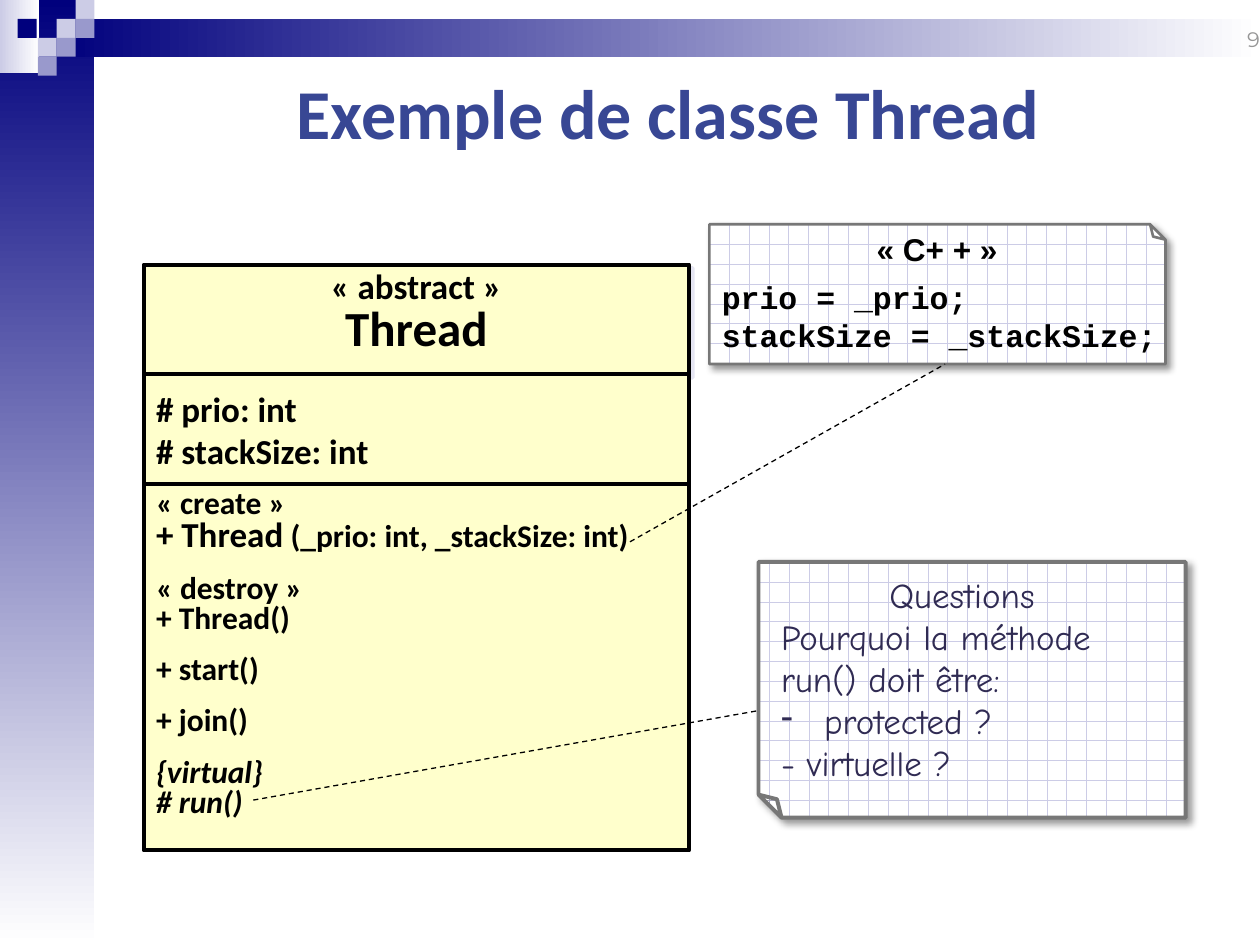
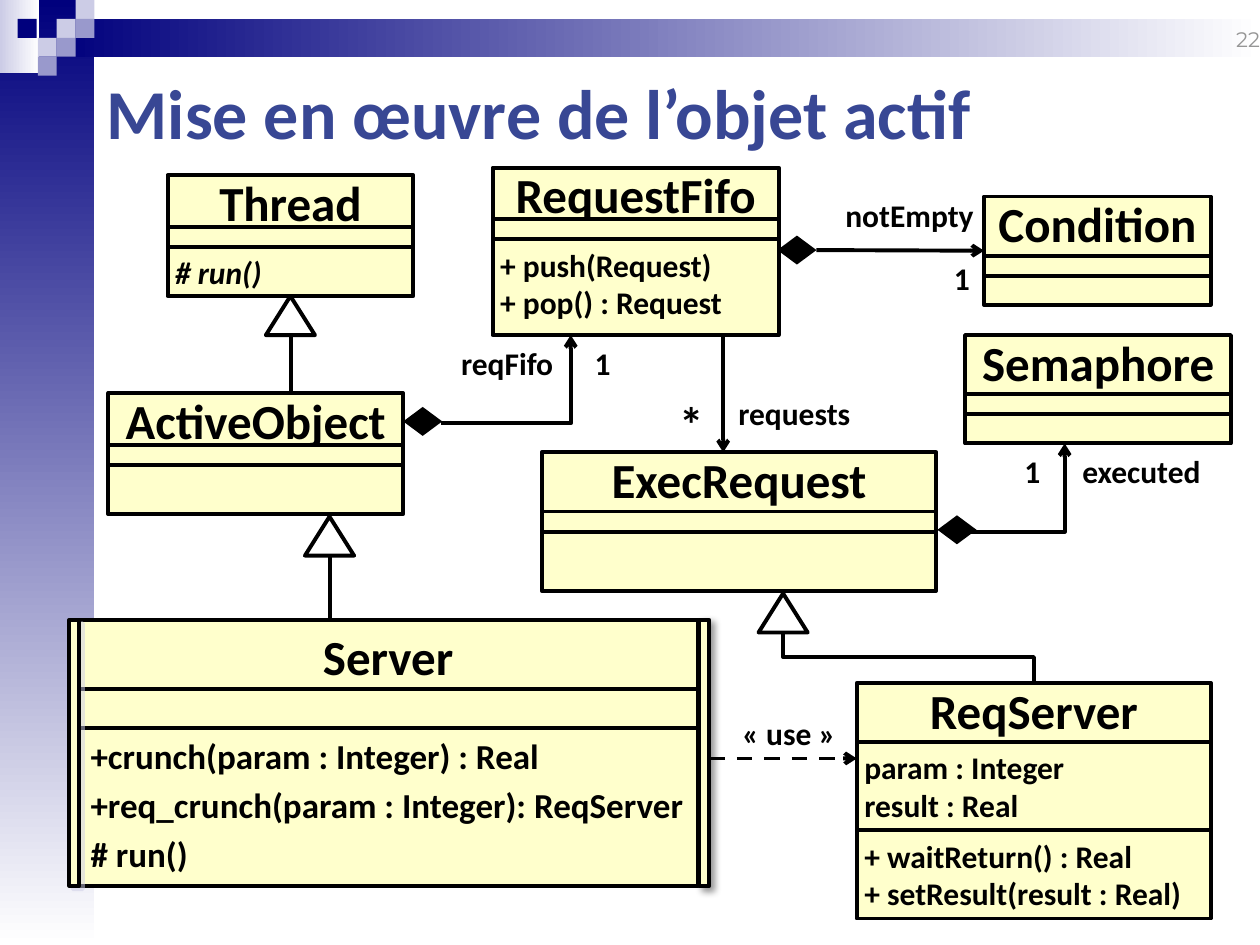
from lxml import etree
from pptx import Presentation
from pptx.dml.color import RGBColor
from pptx.enum.dml import MSO_LINE, MSO_PATTERN
from pptx.enum.shapes import MSO_CONNECTOR, MSO_SHAPE
from pptx.enum.text import MSO_ANCHOR, PP_ALIGN
from pptx.oxml.ns import qn
from pptx.util import Inches, Pt

RECT, NOTE = MSO_SHAPE.RECTANGLE, MSO_SHAPE.FOLDED_CORNER
GEM, TRI = MSO_SHAPE.DIAMOND, MSO_SHAPE.ISOSCELES_TRIANGLE
LINE, ELBOW = MSO_CONNECTOR.STRAIGHT, MSO_CONNECTOR.ELBOW
LEFT, MID, RIGHT = PP_ALIGN.LEFT, PP_ALIGN.CENTER, PP_ALIGN.RIGHT
TOP, HALF, LOW = MSO_ANCHOR.TOP, MSO_ANCHOR.MIDDLE, MSO_ANCHOR.BOTTOM
DASH, GRID = MSO_LINE.DASH, MSO_PATTERN.DOTTED_GRID

BLACK, WHITE = RGBColor(0, 0, 0), RGBColor(255, 255, 255)
NAVY, MAUVE = RGBColor(0, 0, 0x7D), RGBColor(0x99, 0x99, 0xCC)
PALE, CREAM = RGBColor(0xCC, 0xCC, 0xE6), RGBColor(0xFF, 0xFF, 0xCC)
BLUE, PLUM = RGBColor(0x38, 0x47, 0x94), RGBColor(0x30, 0x2B, 0x53)
GRAY, EDGE = RGBColor(0x96, 0x96, 0x96), RGBColor(0x77, 0x77, 0x77)
SANS, MONO, HAND = "Calibri", "Courier New", "Comic Neue"

SOFT = (BLACK, 40, 4, 3)
FLAT = (PALE, 50, 0, 2.8)
BARE = (0, 0, 0)
SLIM = (0.06, 0.05, 0.05)

STEP = 0.15
TILES = [(0.45, 1, PALE), (0.6, 0, PALE), (0.6, 1, MAUVE), (0.3, 2, PALE),
         (0.14, 1, NAVY), (0.45, 2, MAUVE), (0.3, 3, MAUVE)]

THREAD = {
    "at": (1.14, 2.1, 4.33), "rows": (0.87, 0.87, 2.91), "shade": FLAT,
    "name": [[("« abstract »", 20), ("\nThread", 28)]],
    "vars": ["# prio: int", "# stackSize: int"], "vars_style": {"size": 20},
    "ops": [[("« create »", 18), ("\n+ Thread", 20),
             (" (_prio: int, _stackSize: int)", 18)],
            "« destroy »\n+ Thread()", "+ start()", "+ join()",
            "{virtual}\n# run()"],
    "ops_style": {"lead": 0.8, "gap": 12, "slant": 4},
}
CODE = ["prio = _prio;", "stackSize = _stackSize;"]
ASK = ["Pourquoi la méthode run() doit être:", "protected ?", "- virtuelle ?"]
LINKS = [((5, 4.3), (7.5, 2.89)), ((2.01, 6.35), (6.02, 5.64))]

THIN = (0.41, 0.16, 0.39)
SMALL = (0.47, 0.16, 0.23)
TIGHT = {"pad": SLIM}
MODEL = [
    {"name": ["Server"], "at": (0.62, 4.92, 4.92), "rows": (0.55, 0.31, 1.25),
     "shade": FLAT, "lead": 1.0,
     "ops": ["+crunch(param : Integer) : Real",
             "+req_crunch(param : Integer): ReqServer", "# run()"],
     "ops_style": {"size": 20, "gap": 4}},
    {"name": ["ReqServer"], "at": (6.8, 5.42, 2.81), "rows": (0.47, 0.7, 0.7),
     "vars": ["param : Integer", "result : Real"], "vars_style": TIGHT,
     "ops": ["+ waitReturn() : Real", "+ setResult(result : Real)"],
     "ops_style": TIGHT},
    {"name": ["Thread"], "at": (1.33, 1.39, 1.95), "rows": THIN,
     "ops": ["# run()"], "ops_style": {"pad": SLIM, "slant": 0}},
    {"name": ["ActiveObject"], "at": (0.86, 3.12, 2.34), "rows": THIN},
    {"name": ["RequestFifo"], "at": (3.91, 1.33, 2.27),
     "rows": (0.41, 0.16, 0.76),
     "ops": ["+ push(Request)", "+ pop() : Request"], "ops_style": TIGHT},
    {"name": ["ExecRequest"], "at": (4.3, 3.59, 3.13),
     "rows": (0.47, 0.16, 0.47)},
    {"name": ["Condition"], "at": (7.81, 1.56, 1.8), "rows": SMALL},
    {"name": ["Semaphore"], "at": (7.66, 2.66, 2.11), "rows": SMALL},
]
BARS = [(5.55, SOFT), (0.55, FLAT)]
GEMS = [(3.2, 3.23), (7.44, 4.09), (6.17, 1.87)]
HEADS = [(2.42, 4.1), (2.11, 2.35), (6.02, 4.71)]
STEMS = [((2.31, 2.67), (2.31, 3.12)), ((2.62, 4.42), (2.62, 4.92))]
BENDS = [[(3.5, 3.36), (4.53, 3.36), (4.53, 2.66)],
         [(7.71, 4.22), (8.45, 4.22), (8.45, 3.52)]]
ROLES = [("« use »", 5.89, 5.67, 0.75, 18), ("*", 5.39, 3.12, 0.2, 28),
         ("requests", 5.86, 3.13, 0.89, 18), ("reqFifo", 3.66, 2.73, 0.74, 18),
         ("1", 4.72, 2.73, 0.13, 18), ("notEmpty", 6.71, 1.56, 1.03, 18),
         ("1", 7.57, 2.06, 0.13, 18), ("executed", 8.59, 3.59, 0.94, 18),
         ("1", 8.13, 3.59, 0.13, 18)]


def add(parent, tag, **attrs):
    node = etree.SubElement(parent, qn(tag))
    for key, val in attrs.items():
        node.set(key, str(val))
    return node


def cast(shape, hue, alpha, blur, dist):
    fx = shape.element.spPr.find(qn("a:effectLst"))
    drop = add(fx, "a:outerShdw", blurRad=Pt(blur), dist=Pt(dist),
               dir=45 * 60000, algn="tl", rotWithShape=0)
    add(add(drop, "a:srgbClr", val=hue), "a:alpha", val=alpha * 1000)


def draw(slide, kind, x, y, w, h, fill=CREAM, line=BLACK, width=2.25,
         shade=None):
    shape = slide.shapes.add_shape(kind, *map(Inches, (x, y, w, h)))
    shape.shadow.inherit = False
    if fill:
        shape.fill.solid()
        shape.fill.fore_color.rgb = fill
    if line:
        shape.line.color.rgb = line
        shape.line.width = Pt(width)
    else:
        shape.line.fill.background()
    if shade:
        cast(shape, *shade)
    return shape


def fade(slide, x, y, w, h, hue, angle):
    shape = draw(slide, RECT, x, y, w, h, None, None)
    shape.fill.gradient()
    shape.fill.gradient_angle = angle
    for stop, tone in zip(shape.fill.gradient_stops, (hue, WHITE)):
        stop.color.rgb = tone


def write(shape, paras, size=18, font=SANS, ink=BLACK, bold=True, slant=None,
          align=LEFT, anchor=TOP, pad=(0.1, 0.05, 0.05), wrap=False, lead=None,
          gap=0, dash=None):
    frame = shape.text_frame
    frame.word_wrap = wrap
    frame.vertical_anchor = anchor
    frame.margin_left = frame.margin_right = Inches(pad[0])
    frame.margin_top, frame.margin_bottom = Inches(pad[1]), Inches(pad[2])
    for i, para in enumerate(paras):
        p = frame.add_paragraph() if i else frame.paragraphs[0]
        if isinstance(para, str):
            p.text = para
        else:
            for text, points in para:
                if text.startswith("\n"):
                    p.add_line_break()
                run = p.add_run()
                run.text = text.lstrip("\n")
                run.font.size = Pt(points)
        p.alignment = align
        if lead:
            p.line_spacing = lead
        if i and gap:
            p.space_before = Pt(gap)
        if i == dash:
            props = p._p.get_or_add_pPr()
            props.set("marL", str(Inches(0.34)))
            props.set("indent", str(-Inches(0.34)))
            add(props, "a:buChar", char="-")
        p.font.name, p.font.size = font, Pt(size)
        p.font.bold, p.font.italic = bold, i == slant
        p.font.color.rgb = ink


def label(slide, text, x, y, w, h, **style):
    box = slide.shapes.add_textbox(*map(Inches, (x, y, w, h)))
    write(box, [text], **style)


def ink_line(shape, width, dash=False, arrow=False):
    shape.line.color.rgb = BLACK
    shape.line.width = Pt(width)
    if dash:
        shape.line.dash_style = DASH
    if arrow:
        add(shape.element.spPr.find(qn("a:ln")), "a:tailEnd", type="arrow")


def join(slide, start, end, width=2.25, dash=False, arrow=False, kind=LINE):
    link = slide.shapes.add_connector(kind, *map(Inches, (*start, *end)))
    ink_line(link, width, dash, arrow)
    add(link.element.spPr, "a:effectLst")
    return link


def bend(slide, points):
    spots = [(Inches(x), Inches(y)) for x, y in points]
    pen = slide.shapes.build_freeform(*spots[0])
    pen.add_line_segments(spots[1:], close=False)
    shape = pen.convert_to_shape()
    shape.shadow.inherit = False
    shape.fill.background()
    ink_line(shape, 2.25, arrow=True)


def uml(slide, spec):
    x, y, w = spec["at"]
    parts = [
        (spec["name"], {"size": 28, "align": MID, "pad": SLIM,
                        "lead": spec.get("lead", 0.85)}),
        (spec.get("vars"), {"anchor": HALF, **spec.get("vars_style", {})}),
        (spec.get("ops"), spec.get("ops_style", {})),
    ]
    for i, (h, (paras, style)) in enumerate(zip(spec["rows"], parts)):
        row = draw(slide, RECT, x, y, w, h,
                   shade=None if i else spec.get("shade"))
        if paras:
            write(row, paras, **style)
        y += h


def memo(slide, x, y, w, h, fold, flip, width):
    shape = draw(slide, NOTE, x, y, w, h, None, EDGE, width, SOFT)
    guides = shape.element.spPr.find(qn("a:prstGeom")).find(qn("a:avLst"))
    add(guides, "a:gd", name="adj", fmla=f"val {round(fold * 100000)}")
    shape.fill.patterned()
    shape.fill.pattern = GRID
    shape.fill.fore_color.rgb, shape.fill.back_color.rgb = PALE, WHITE
    shape.element.spPr.find(qn("a:xfrm")).set(flip, "1")
    return shape


def start(deck, title, page, align):
    slide = deck.slides.add_slide(deck.slide_layouts[6])
    fade(slide, 0, 0, 0.75, 7.5, NAVY, 270)
    fade(slide, 0, 0, 0.31, 0.58, PALE, 0)
    fade(slide, 0.45, STEP, 9.55, 2 * STEP, NAVY, 0)
    for x, row, hue in TILES:
        draw(slide, RECT, x, row * STEP, STEP, STEP, hue, None)
    label(slide, title, 0.75, 0.5, 9.1, 0.75, size=40, ink=BLUE, align=align,
          wrap=True)
    label(slide, page, 9.68, 0.21, 0.32, 0.2, size=12, font="Montserrat",
          ink=GRAY, bold=False, align=RIGHT, anchor=HALF, pad=BARE)
    return slide


def show_thread(deck):
    slide = start(deck, "Exemple de classe Thread", "9", MID)
    code = memo(slide, 5.63, 1.78, 3.62, 1.11, 0.11, "flipV", 1.5)
    write(code, CODE, font=MONO, anchor=LOW, pad=(0.1, 0.08, 0.08))
    code.text_frame._txBody.bodyPr.set("rot", str(180 * 60000))
    uml(slide, THREAD)
    label(slide, "« C+ + »", 6.86, 1.78, 1.16, 0.4, font="Arial")
    ask = memo(slide, 6.02, 4.46, 3.39, 2.03, 0.09, "flipH", 2.25)
    write(ask, ASK, size=20, font=HAND, ink=PLUM, bold=False, anchor=HALF,
          pad=(0.18, 0.39, 0.05), wrap=True, dash=1)
    label(slide, "Questions", 6.96, 4.5, 1.51, 0.43, size=20, font=HAND,
          ink=PLUM, bold=False)
    for a, b in LINKS:
        join(slide, a, b, 0.75, dash=True)


def show_model(deck):
    slide = start(deck, "Mise en œuvre de l’objet actif", "22", LEFT)
    for a, b in STEMS:
        join(slide, a, b)
    for spec in MODEL:
        uml(slide, spec)
    for x, shade in BARS:
        draw(slide, RECT, x, 4.92, 0.08, 2.11, shade=shade)
    gems = [draw(slide, GEM, x, y, 0.31, 0.23, BLACK, None) for x, y in GEMS]
    for x, y in HEADS:
        draw(slide, TRI, x, y, 0.39, 0.31, WHITE)
    join(slide, (5.74, 2.65), (5.74, 3.59), arrow=True)
    join(slide, (5.63, 6.02), (6.8, 6.02), dash=True, arrow=True)
    wait = join(slide, (6.48, 1.99), (7.81, 1.99), arrow=True)
    wait.begin_connect(gems[-1], 3)
    for points in BENDS:
        bend(slide, points)
    elbow = join(slide, (7.01, 4.22), (7.41, 6.21), kind=ELBOW)
    frame = elbow.element.spPr.find(qn("a:xfrm"))
    frame.set("rot", str(270 * 60000))
    frame.set("flipH", "1")
    for text, x, y, w, size in ROLES:
        label(slide, text, x, y, w, 0.3, size=size, pad=BARE)


def main():
    deck = Presentation()
    deck.slide_width, deck.slide_height = Inches(10), Inches(7.5)
    show_thread(deck)
    show_model(deck)
    deck.save("out.pptx")


if __name__ == "__main__":
    main()
